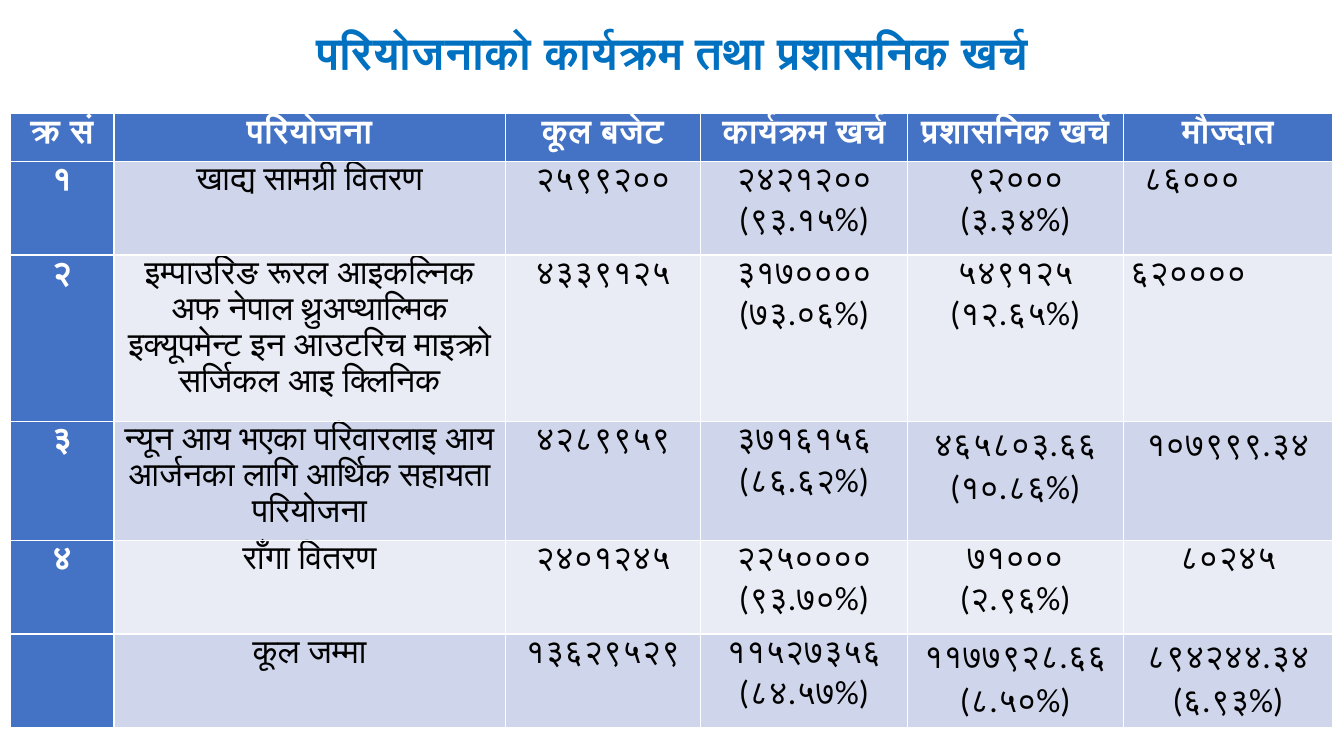
from pptx import Presentation
from pptx import util as u
from pptx.dml.color import RGBColor
from pptx.enum import text


class Deck:
    """Holds the style and the current slide."""

    hues = {"title": "0070C0", "head": "4472C4", "odd": "CFD5EA",
            "even": "E9EBF5", "light": "FFFFFF", "dark": "000000"}

    def __init__(self):
        self.prs = Presentation()
        self.prs.slide_width = u.Inches(13.33)
        self.prs.slide_height = u.Inches(7.5)
        self.slide = self.prs.slides.add_slide(self.prs.slide_layouts[5])

    def hue(self, name):
        return RGBColor.from_string(self.hues[name])

    def style(self, para, face, size, name, bold, gap):
        font = para.font
        font.name, font.size, font.bold = face, u.Pt(size), bold
        font.color.rgb = self.hue(name)
        para.line_spacing = gap
        para.alignment = text.PP_ALIGN.CENTER

    def title(self, words, left, top, width, height):
        box = self.slide.shapes.title
        box.left, box.top = u.Inches(left), u.Inches(top)
        box.width, box.height = u.Inches(width), u.Inches(height)
        frame = box.text_frame
        frame.text = words
        frame.auto_size = text.MSO_AUTO_SIZE.NONE
        frame.vertical_anchor = text.MSO_ANCHOR.MIDDLE
        self.style(frame.paragraphs[0], "Times New Roman", 32, "title", True, 0.9)

    def cell(self, cell, words, fill, strong):
        cell.fill.solid()
        cell.fill.fore_color.rgb = self.hue(fill)
        cell.margin_left = cell.margin_right = u.Inches(0.07)
        cell.margin_top = cell.margin_bottom = 0
        cell.text = words
        for para in cell.text_frame.paragraphs:
            self.style(para, "Calibri", 24, "light" if strong else "dark", strong, 1.07)

    def table(self, rows, left, top, widths, heights):
        grid = self.slide.shapes.add_table(
            len(rows), len(widths), u.Inches(left), u.Inches(top),
            u.Inches(sum(widths)), u.Inches(sum(heights))).table
        grid.first_col = True
        for col, width in zip(grid.columns, widths):
            col.width = u.Inches(width)
        for r, (row, height) in enumerate(zip(rows, heights)):
            grid.rows[r].height = u.Inches(height)
            for c, words in enumerate(row):
                strong = r == 0 or c == 0
                fill = "head" if strong else "odd" if r % 2 else "even"
                self.cell(grid.cell(r, c), words, fill, strong)
        return grid

    def left(self, cell, inset):
        cell.margin_left = u.Inches(inset)
        cell.text_frame.paragraphs[0].alignment = text.PP_ALIGN.LEFT


ROWS = [
    ("क्र सं", "परियोजना", "कूल बजेट", "कार्यक्रम खर्च", "प्रशासनिक खर्च", "मौज्दात"),
    ("१", "खाद्य सामग्री वितरण", "२५९९२००", "२४२१२००\n(९३.१५%)",
     "९२०००\n(३.३४%)", "८६०००"),
    ("२", "इम्पाउरिङ रूरल आइकल्निक अफ नेपाल थ्रुअप्थाल्मिक "
     "इक्यूपमेन्ट इन आउटरिच माइक्रो सर्जिकल आइ क्लिनिक",
     "४३३९१२५", "३१७००००\n(७३.०६%)", "५४९१२५\n(१२.६५%)", "६२००००"),
    ("३", "न्यून आय भएका परिवारलाइ आय आर्जनका लागि आर्थिक सहायता परियोजना",
     "४२८९९५९", "३७१६१५६\n(८६.६२%)", "४६५८०३.६६\n(१०.८६%)", "१०७९९९.३४"),
    ("४", "राँगा वितरण", "२४०१२४५", "२२५००००\n(९३.७०%)",
     "७१०००\n(२.९६%)", "८०२४५"),
    ("", "कूल जम्मा", "१३६२९५२९", "११५२७३५६\n(८४.५७%)",
     "११७७९२८.६६\n(८.५०%)", "८९४२४४.३४\n(६.९३%)"),
]


def main():
    deck = Deck()
    deck.title("परियोजनाको कार्यक्रम तथा प्रशासनिक खर्च", 0.92, 0.13, 11.5, 0.84)
    grid = deck.table(ROWS, 0.1, 1.13, [1.03, 3.88, 1.94, 2.05, 2.14, 2.08],
                      [0.47, 0.93, 1.65, 1.18, 0.93, 0.93])
    deck.left(grid.cell(1, 5), 0.2)
    deck.left(grid.cell(2, 5), 0.07)
    deck.prs.save("out.pptx")


if __name__ == "__main__":
    main()
